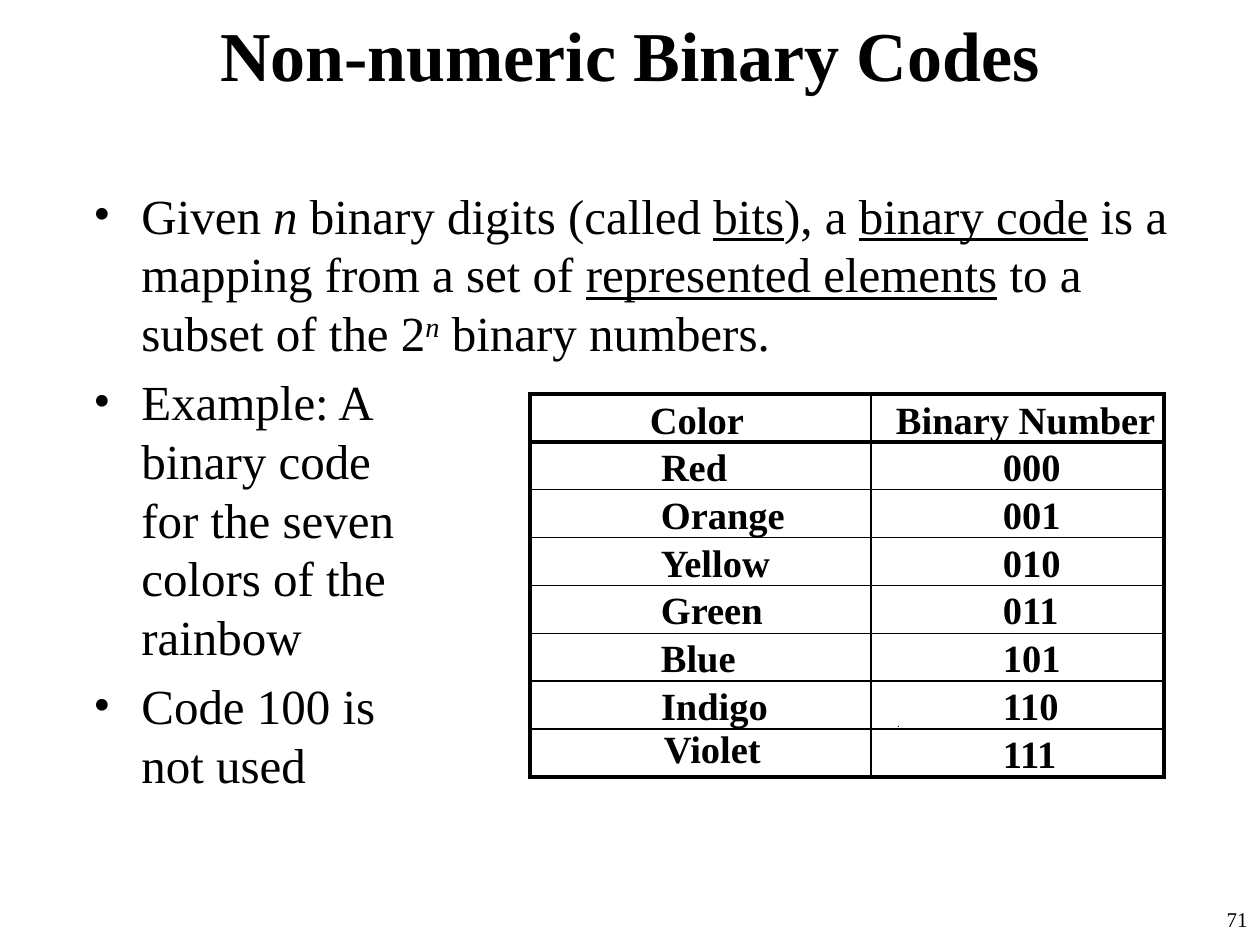
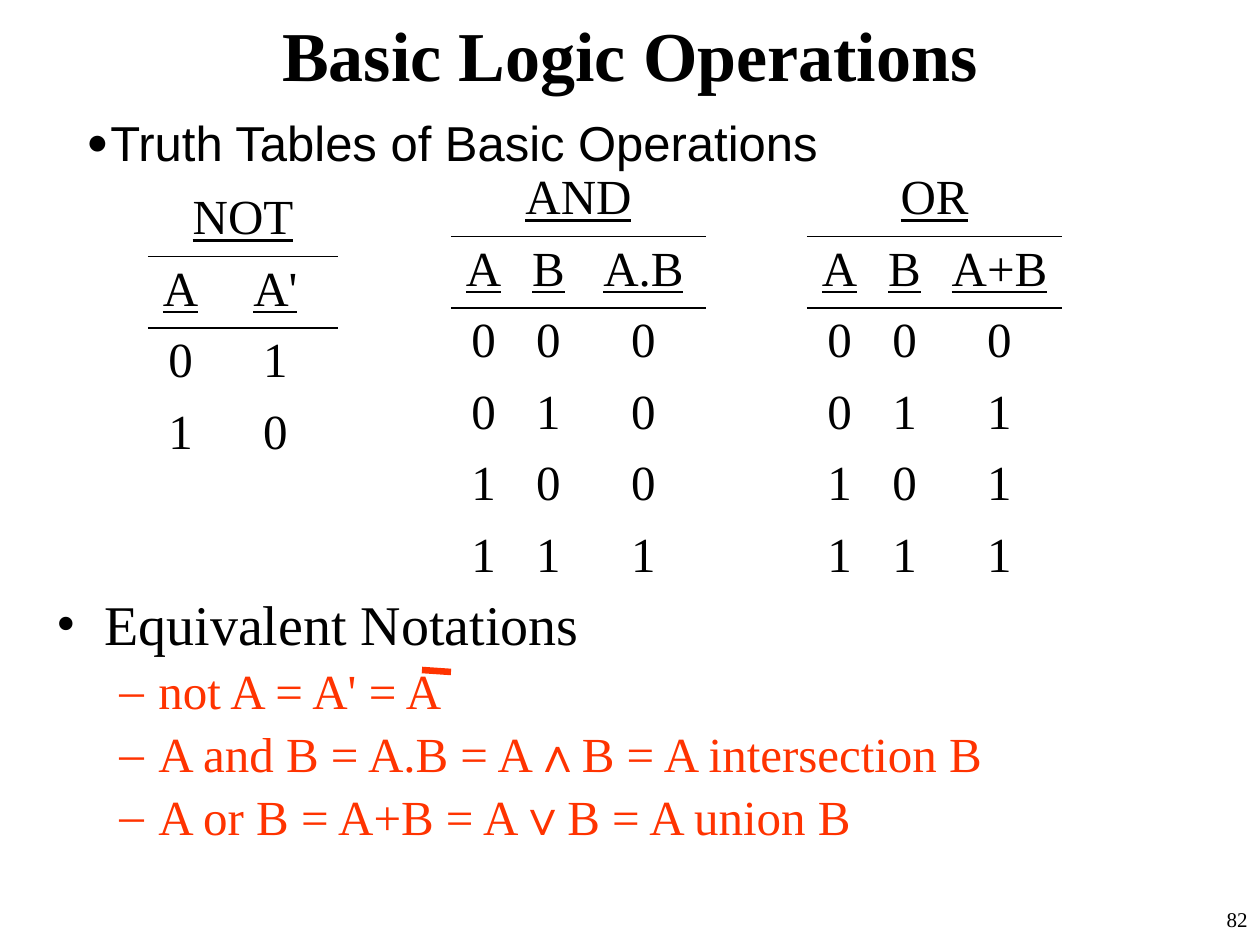
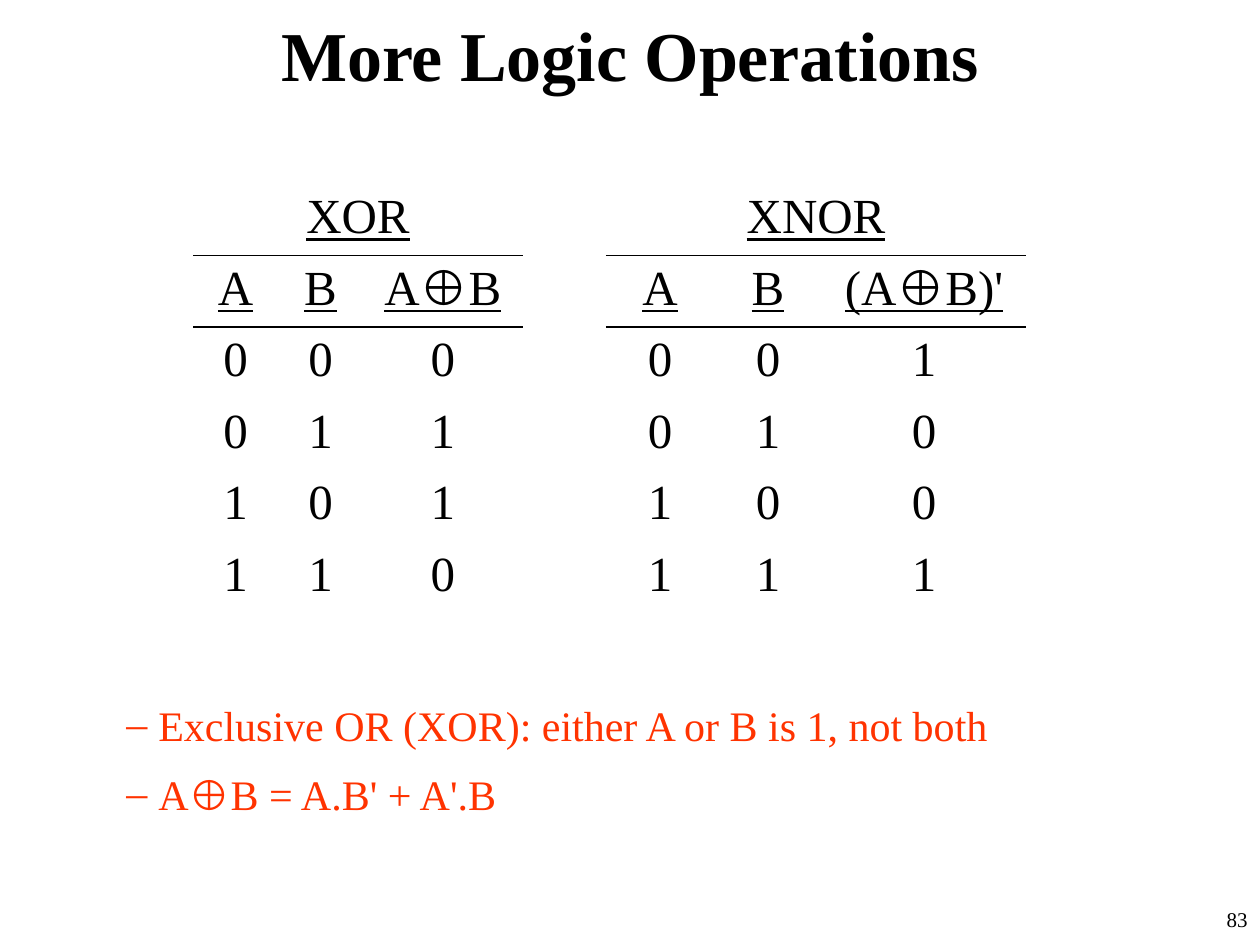
import pptx
import pptx.dml.color
import pptx.enum.shapes
import pptx.enum.text
import pptx.oxml.ns
import pptx.util
from lxml import etree

PX = 7257
SERIF = "Times New Roman"
SANS = "Arial"
BLACK = pptx.dml.color.RGBColor(0x00, 0x00, 0x00)
RED = pptx.dml.color.RGBColor(0xFF, 0x33, 0x00)
ALIGN = pptx.enum.text.PP_ALIGN
MIDDLE = pptx.enum.text.MSO_ANCHOR.MIDDLE
qn = pptx.oxml.ns.qn


def write_text(frame, text, size=28, font=SERIF, color=BLACK, bold=None, underline=None,
               align=ALIGN.LEFT, before=0, spacing=None, level=0,
               bullet=None, bullet_percent=100, left=0, hanging=0, wrap=True):
    frame.word_wrap = wrap
    paragraph = frame.paragraphs[0]
    if paragraph.runs:
        paragraph = frame.add_paragraph()
    paragraph.alignment = align
    paragraph.level = level
    paragraph.space_before = pptx.util.Pt(size * before)
    if spacing:
        paragraph.line_spacing = spacing
    if bullet:
        properties = paragraph._p.get_or_add_pPr()
        properties.set("marL", str(left * PX))
        properties.set("indent", str(-hanging * PX))
        etree.SubElement(properties, qn("a:buSzPct"), val=str(bullet_percent * 1000))
        etree.SubElement(properties, qn("a:buFont"), typeface=font)
        etree.SubElement(properties, qn("a:buChar"), char=bullet)
    pieces = [(text, "")] if isinstance(text, str) else text
    for piece, style in pieces:
        for number, line in enumerate(piece.split("\n")):
            if number:
                paragraph.add_line_break()
            run = paragraph.add_run()
            run.text = line
            run.font.name = font
            run.font.size = pptx.util.Pt(size)
            run.font.color.rgb = color
            run.font.bold = bold
            run.font.underline = underline or "u" in style
            run.font.italic = "i" in style
            if "^" in style:
                run.font._element.set("baseline", "30000")


def format_cell(cell, left=0, right=0, top=0, bottom=0):
    properties = cell._tc.get_or_add_tcPr()
    for side, points in (("L", left), ("R", right), ("T", top), ("B", bottom)):
        line = etree.SubElement(properties, qn("a:ln" + side), w=str(int(points * 12700)))
        if points:
            fill = etree.SubElement(line, qn("a:solidFill"))
            etree.SubElement(fill, qn("a:srgbClr"), val=str(BLACK))
        else:
            etree.SubElement(line, qn("a:noFill"))
    cell.fill.background()


presentation = pptx.Presentation()
presentation.slide_width = 1260 * PX
presentation.slide_height = 945 * PX

slides = []
for title, page in (("Non-numeric Binary Codes", "71"),
                    ("Basic Logic Operations", "82"),
                    ("More Logic Operations", "83")):
    slide = presentation.slides.add_slide(presentation.slide_layouts[5])
    placeholder = slide.shapes.title
    placeholder.left, placeholder.top = 0, 0
    placeholder.width, placeholder.height = 1260 * PX, 106 * PX
    placeholder.text_frame.vertical_anchor = MIDDLE
    placeholder.text_frame.auto_size = pptx.enum.text.MSO_AUTO_SIZE.NONE
    write_text(placeholder.text_frame, title, size=40, bold=True, align=ALIGN.CENTER)
    number_box = slide.shapes.add_textbox(998 * PX, 900 * PX, 262 * PX, 45 * PX)
    write_text(number_box.text_frame, page, size=12, align=ALIGN.RIGHT)
    slides.append(slide)
codes_slide, basic_slide, more_slide = slides

definition = [
    ("Given ", ""), ("n", "i"), (" binary digits (called ", ""), ("bits", "u"),
    ("), a ", ""), ("binary code", "u"), (" is a mapping from a set of ", ""),
    ("represented elements", "u"), (" to a subset of the 2", ""), ("n", "i^"),
    (" binary numbers.", ""),
]
example = "Example: A\nbinary code\nfor the seven\ncolors of the\nrainbow"
body = codes_slide.shapes.add_textbox(81 * PX, 179 * PX, 1116 * PX, 672 * PX)
for text in (definition, example, "Code 100 is \nnot used"):
    write_text(body.text_frame, text, before=0.2, bullet="•", left=48, hanging=48)

dot = codes_slide.shapes.add_shape(pptx.enum.shapes.MSO_SHAPE.RECTANGLE,
                                   898 * PX, 726 * PX, PX, PX)
dot.shadow.inherit = False
dot.fill.solid()
dot.fill.fore_color.rgb = BLACK
dot.line.fill.background()

color_codes = [
    ("Color", 650, 95, "Binary Number", 896, 260),
    ("Red", 661, 67, "000", 1003, 58),
    ("Orange", 661, 124, "001", 1003, 58),
    ("Yellow", 661, 114, "010", 1003, 58),
    ("Green", 661, 102, "011", 1003, 58),
    ("Blue", 661, 75, "101", 1003, 58),
    ("Indigo", 661, 107, "110", 1003, 58),
    ("Violet", 664, 108, "111", 1003, 58),
]
for index, (name, name_left, name_width, code, code_left, code_width) in enumerate(color_codes):
    top = 396 + 334 * index // 7
    name_top = top - 5 if name == "Violet" else top
    for text, left, label_top, width in ((name, name_left, name_top, name_width),
                                         (code, code_left, top, code_width)):
        label = codes_slide.shapes.add_textbox(left * PX, label_top * PX, width * PX, 47 * PX)
        frame = label.text_frame
        frame.margin_left = frame.margin_right = frame.margin_top = frame.margin_bottom = 0
        write_text(frame, text, size=22, bold=True, wrap=False)

grid = codes_slide.shapes.add_table(len(color_codes), 2, 530 * PX, 394 * PX,
                                    634 * PX, 383 * PX).table
grid.first_row = grid.horz_banding = False
grid.columns[0].width = 341 * PX
grid.columns[1].width = 293 * PX
last_row = len(color_codes) - 1
for row in range(len(color_codes)):
    for column in range(2):
        cell = grid.cell(row, column)
        cell.margin_top = cell.margin_bottom = 0
        format_cell(cell,
                    left=1 if column else 2.25,
                    right=2.25 if column else 1,
                    top=2.25 if row < 2 else 1,
                    bottom=2.25 if row in (0, last_row) else 1)

truth_tables = [
    (basic_slide, "AND", 451, 165, (65, 65, 125), ("A", "B", "A.B"), "000 010 100 111"),
    (basic_slide, "OR", 807, 165, (65, 65, 125), ("A", "B", "A+B"), "000 011 101 111"),
    (basic_slide, "NOT", 148, 185, (65, 125), ("A", "A'"), "01 10"),
    (more_slide, "XOR", 193, 184, (85, 85, 160), ("A", "B", "A⊕B"), "000 011 101 110"),
    (more_slide, "XNOR", 606, 184, (108, 108, 204), ("A", "B", "(A⊕B)'"), "001 010 100 111"),
]
for slide, operation, left, top, widths, headers, values in truth_tables:
    rows = [[operation], headers] + values.split()
    table = slide.shapes.add_table(len(rows), len(widths), left * PX, top * PX,
                                   sum(widths) * PX, 428 * PX * len(rows) // 6).table
    table.first_row = table.horz_banding = False
    for column, width in enumerate(widths):
        table.columns[column].width = width * PX
    table.cell(0, 0).merge(table.cell(0, len(widths) - 1))
    for row, texts in enumerate(rows):
        for column in range(len(widths)):
            format_cell(table.cell(row, column),
                        top=1 if row in (1, 2) else 0, bottom=1 if row < 2 else 0)
        for column, text in enumerate(texts):
            write_text(table.cell(row, column).text_frame, text,
                       underline=row < 2, align=ALIGN.CENTER)

heading = basic_slide.shapes.add_textbox(74 * PX, 106 * PX, 770 * PX, 72 * PX)
heading.text_frame.vertical_anchor = MIDDLE
write_text(heading.text_frame, "Truth Tables of Basic Operations", font=SANS,
           bullet="●", bullet_percent=75, left=24, hanging=24)

overline = basic_slide.shapes.add_connector(pptx.enum.shapes.MSO_CONNECTOR.STRAIGHT,
                                            422 * PX, 670 * PX, 451 * PX, 672 * PX)
overline.line.color.rgb = RED
overline.line.width = pptx.util.Pt(3.75)
etree.SubElement(overline._element.spPr, qn("a:effectLst"))

notations = basic_slide.shapes.add_textbox(44 * PX, 591 * PX, 1142 * PX, 290 * PX)
write_text(notations.text_frame, "Equivalent Notations", size=32, before=0.2, spacing=0.9,
           bullet="•", left=48, hanging=48)
for text in ("not A = A' = A",
             "A and B = A.B = A∧B = A intersection B",
             "A or B = A+B = A∨B = A union B"):
    write_text(notations.text_frame, text, color=RED, before=0.2, spacing=0.9, level=1,
               bullet="–", left=102, hanging=39)

explanation = more_slide.shapes.add_textbox(59 * PX, 683 * PX, 1135 * PX, 140 * PX)
for text in ("Exclusive OR (XOR): either A or B is 1, not both", "A⊕B = A.B' + A'.B"):
    write_text(explanation.text_frame, text, size=24, color=RED, before=0.2, spacing=1.2,
               level=1, bullet="–", left=87, hanging=32)

presentation.save("out.pptx")
